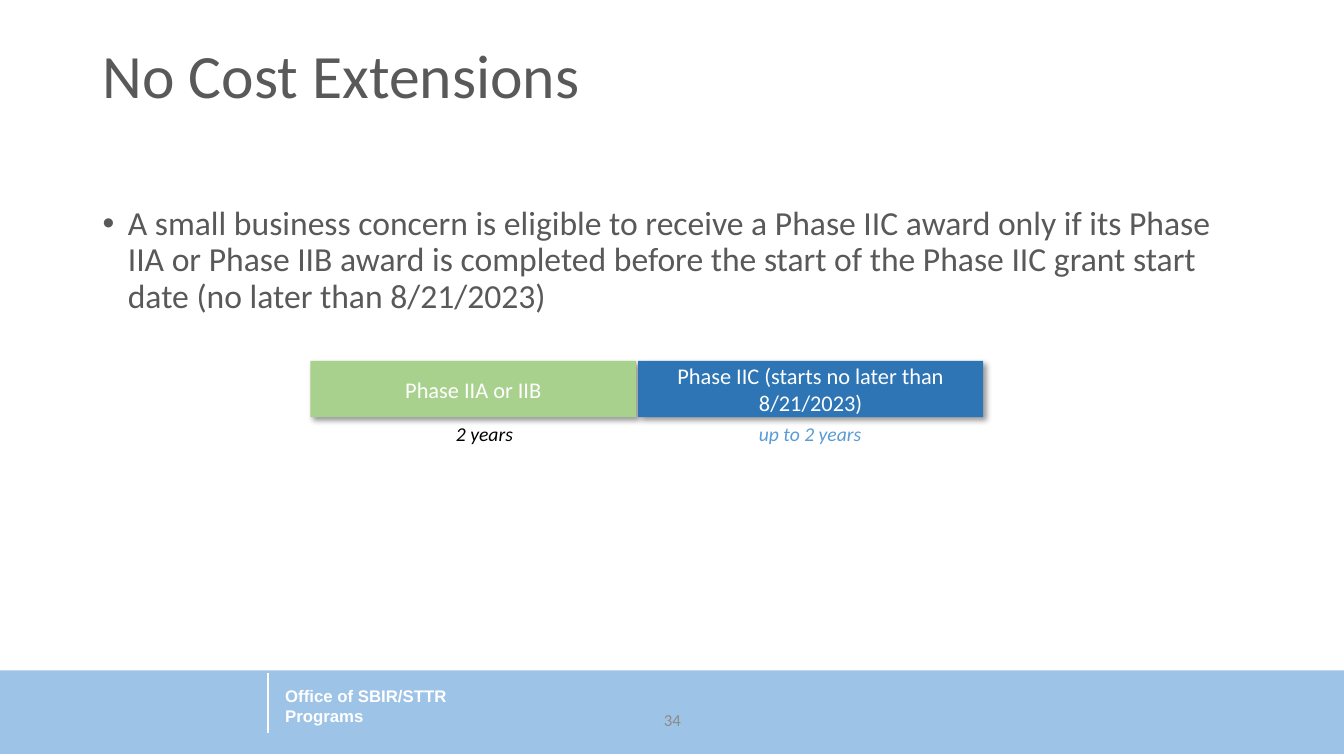
from dataclasses import dataclass

from lxml.etree import SubElement as Sub
from pptx import Presentation as Deck
from pptx.dml.color import RGBColor as RGB
from pptx.enum.shapes import MSO_CONNECTOR as Conn, MSO_SHAPE as Form
from pptx.enum.text import MSO_ANCHOR as Anchor, MSO_AUTO_SIZE as Auto, PP_ALIGN as Align
from pptx.oxml.ns import qn
from pptx.util import Inches, Pt


@dataclass(frozen=True)
class Theme:
    font: str = "Calibri"
    brand: str = "Arial"
    white: str = "FFFFFF"
    black: str = "000000"
    text: str = "595959"
    muted: str = "8C8C8C"
    band: str = "9DC3E6"
    green: str = "A9D18E"
    blue: str = "2E75B6"
    sky: str = "5B9BD5"
    title: int = 44
    body: int = 24
    label: int = 16
    note: int = 14
    small: int = 12


def write(frame, text, size, color, font, bold=False, slant=False,
          align=Align.LEFT, anchor=Anchor.TOP, lead=1.0, bullet=False):
    frame.word_wrap = True
    frame.auto_size = Auto.NONE
    frame.vertical_anchor = anchor
    para = frame.paragraphs[0]
    para.text = text
    para.alignment = align
    para.line_spacing = lead
    para.space_before = Pt(0)
    if bullet:
        props = para._p.get_or_add_pPr()
        props.set("marL", str(Inches(0.25)))
        props.set("indent", str(-Inches(0.25)))
        Sub(props, qn("a:buFont"), typeface="Arial")
        Sub(props, qn("a:buChar"), char="•")
    face = para.runs[0].font
    face.name, face.size = font, Pt(size)
    face.bold, face.italic = bold, slant
    face.color.rgb = RGB.from_string(color)


class Page:
    """Draw styled elements on one slide."""

    def __init__(self, deck, theme):
        self.theme = theme
        self.slide = deck.slides.add_slide(deck.slide_layouts[5])
        self.shapes = self.slide.shapes

    def title(self, text, box):
        head = self.shapes.title
        head.left, head.top, head.width, head.height = map(Inches, box)
        write(head.text_frame, text, self.theme.title, self.theme.text,
              self.theme.font, lead=0.9)

    def text(self, text, box, size, color, font=None, **style):
        area = self.shapes.add_textbox(*map(Inches, box))
        write(area.text_frame, text, size, color, font or self.theme.font, **style)

    def block(self, box, color, text=None, shade=False):
        rect = self.shapes.add_shape(Form.RECTANGLE, *map(Inches, box))
        rect.fill.solid()
        rect.fill.fore_color.rgb = RGB.from_string(color)
        rect.line.fill.background()
        rect.shadow.inherit = False
        if shade:
            glow = Sub(rect._element.spPr.find(qn("a:effectLst")), qn("a:outerShdw"),
                       blurRad=str(Pt(4)), dist=str(Pt(3)), dir="2700000",
                       algn="tl", rotWithShape="0")
            tint = Sub(glow, qn("a:srgbClr"), val=self.theme.black)
            Sub(tint, qn("a:alpha"), val="40000")
        if text:
            write(rect.text_frame, text, self.theme.label, self.theme.white,
                  self.theme.font, align=Align.CENTER, anchor=Anchor.MIDDLE)

    def rule(self, start, end, color):
        line = self.shapes.add_connector(Conn.STRAIGHT, *map(Inches, start + end))
        line.line.color.rgb = RGB.from_string(color)
        line.line.width = Pt(1)
        Sub(line._element.spPr, qn("a:effectLst"))


def main():
    deck = Deck()
    deck.slide_width, deck.slide_height = Inches(13.33), Inches(7.5)
    theme = Theme()
    page = Page(deck, theme)

    page.block((0, 6.65, 13.33, 0.83), theme.band)
    page.text("Office of SBIR/STTR Programs", (2.73, 6.74, 2.11, 0.52), theme.small,
              theme.white, theme.brand, bold=True, anchor=Anchor.MIDDLE)
    page.rule((2.66, 6.68), (2.66, 7.27), theme.white)

    page.title("No Cost Extensions", (0.92, 0.4, 11.5, 1.45))
    page.text("A small business concern is eligible to receive a Phase IIC award only "
              "if its Phase IIA or Phase IIB award is completed before the start of the "
              "Phase IIC grant start date (no later than 8/21/2023)",
              (0.92, 2, 11.5, 4.35), theme.body, theme.text, lead=0.9, bullet=True)

    phases = (
        (3.08, 3.23, theme.green, "Phase IIA or IIB", 4.15, "2 years", theme.black),
        (6.33, 3.42, theme.blue, "Phase IIC (starts no later than 8/21/2023)",
         7.38, "up to 2 years", theme.sky),
    )
    for left, width, fill, name, edge, span, color in phases:
        page.block((left, 3.58, width, 0.56), fill, name, shade=True)
        page.text(span, (edge, 4.14, 1.31, 0.34), theme.note, color,
                  slant=True, align=Align.CENTER)

    page.text("34", (5.17, 6.94, 3, 0.4), theme.small, theme.muted,
              align=Align.CENTER, anchor=Anchor.MIDDLE)
    deck.save("out.pptx")


if __name__ == "__main__":
    main()
